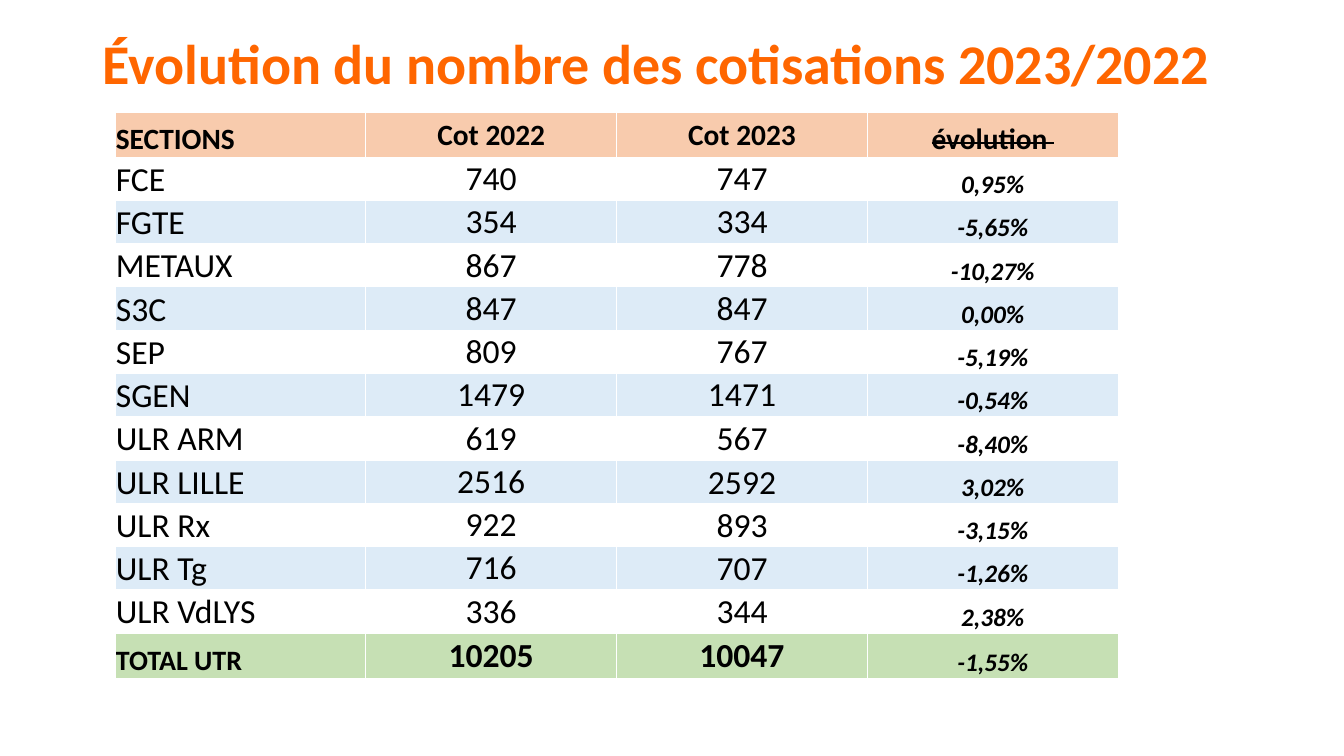
from dataclasses import dataclass

from lxml.etree import SubElement
from pptx import Presentation
from pptx.dml.color import RGBColor
from pptx.enum.text import MSO_ANCHOR, MSO_AUTO_SIZE, PP_ALIGN
from pptx.oxml.ns import qn
from pptx.table import _Cell
from pptx.text.text import _Paragraph
from pptx.util import Cm, Pt

FONT = "Calibri"
ORANGE, BLACK, WHITE = "FF6600", "000000", "FFFFFF"
PEACH, PALE_BLUE, GREEN = "F8CBAD", "DDEBF7", "C6E0B4"
TITLE = "Évolution du nombre des cotisations 2023/2022"


@dataclass(frozen=True)
class TextStyle:
    size: int
    bold: bool = False
    italic: bool = False
    color: str = BLACK


@dataclass(frozen=True)
class Row:
    values: tuple[str, str, str, str]
    fill: str
    styles: tuple[TextStyle, TextStyle, TextStyle, TextStyle]
    height: float = 1.09


HEADING = TextStyle(21, bold=True)
PLAIN = TextStyle(24)
CHANGE = TextStyle(18, bold=True, italic=True)
TOTAL_NAME = TextStyle(20, bold=True)
TOTAL = TextStyle(24, bold=True)

SECTIONS = [
    ("FCE", "740", "747", "0,95%"),
    ("FGTE", "354", "334", "-5,65%"),
    ("METAUX", "867", "778", "-10,27%"),
    ("S3C", "847", "847", "0,00%"),
    ("SEP", "809", "767", "-5,19%"),
    ("SGEN", "1479", "1471", "-0,54%"),
    ("ULR ARM", "619", "567", "-8,40%"),
    ("ULR LILLE", "2516", "2592", "3,02%"),
    ("ULR Rx", "922", "893", "-3,15%"),
    ("ULR Tg", "716", "707", "-1,26%"),
    ("ULR VdLYS", "336", "344", "2,38%"),
]
ROWS = [
    Row(("SECTIONS", "Cot 2022", "Cot 2023", "évolution "), PEACH, (HEADING,) * 4, 1.14),
    *(
        Row(values, PALE_BLUE if index % 2 else "", (PLAIN, PLAIN, PLAIN, CHANGE))
        for index, values in enumerate(SECTIONS)
    ),
    Row(("TOTAL UTR", "10205", "10047", "-1,55%"), GREEN,
        (TOTAL_NAME, TOTAL, TOTAL, CHANGE), 1.14),
]


def rgb(value: str) -> RGBColor:
    return RGBColor.from_string(value)


def format_paragraph(para: _Paragraph, style: TextStyle, align: PP_ALIGN) -> None:
    para.alignment = align
    para.font.name = FONT
    para.font.size = Pt(style.size)
    para.font.bold = style.bold
    para.font.italic = style.italic
    para.font.color.rgb = rgb(style.color)


def add_borders(cell: _Cell) -> None:
    properties = cell._tc.get_or_add_tcPr()
    for position, side in enumerate(("lnL", "lnR", "lnT", "lnB")):
        line = SubElement(properties, qn(f"a:{side}"), w=str(Pt(1)))
        fill = SubElement(line, qn("a:solidFill"))
        SubElement(fill, qn("a:srgbClr"), val=WHITE)
        properties.insert(position, line)


def fill_cell(cell: _Cell, row: Row, column: int) -> None:
    cell.text = row.values[column]
    align = PP_ALIGN.CENTER if column else PP_ALIGN.LEFT
    format_paragraph(cell.text_frame.paragraphs[0], row.styles[column], align)
    low = column in (0, 3) or (column == 2 and row.values[0].startswith("ULR"))
    cell.vertical_anchor = MSO_ANCHOR.BOTTOM if low else MSO_ANCHOR.MIDDLE
    cell.margin_left = cell.margin_right = cell.margin_top = Cm(0.02)
    cell.margin_bottom = Cm(0)
    if row.fill:
        cell.fill.solid()
        cell.fill.fore_color.rgb = rgb(row.fill)
    else:
        cell.fill.background()
    add_borders(cell)


def main() -> None:
    deck = Presentation()
    deck.slide_width, deck.slide_height = Cm(33.87), Cm(19.05)
    page = deck.slides.add_slide(deck.slide_layouts[5])

    title = page.shapes.title
    title.left, title.top, title.width, title.height = Cm(2.34), Cm(0.51), Cm(29.21), Cm(2.31)
    title.text_frame.text = TITLE
    title.text_frame.word_wrap = True
    title.text_frame.auto_size = MSO_AUTO_SIZE.NONE
    title.text_frame.vertical_anchor = MSO_ANCHOR.MIDDLE
    para = title.text_frame.paragraphs[0]
    format_paragraph(para, TextStyle(40, bold=True, color=ORANGE), PP_ALIGN.LEFT)
    para.line_spacing = 0.9
    para.space_after = Pt(6)

    height = Cm(sum(row.height for row in ROWS))
    table = page.shapes.add_table(len(ROWS), 4, Cm(2.9), Cm(2.82), Cm(25.28), height).table
    table.first_row = table.horz_banding = False
    for index, row in enumerate(ROWS):
        table.rows[index].height = Cm(row.height)
        for column in range(4):
            fill_cell(table.cell(index, column), row, column)

    struck = table.cell(0, 3).text_frame.paragraphs[0].runs[0]
    struck._r.get_or_add_rPr().set("strike", "sngStrike")

    deck.save("out.pptx")


if __name__ == "__main__":
    main()
